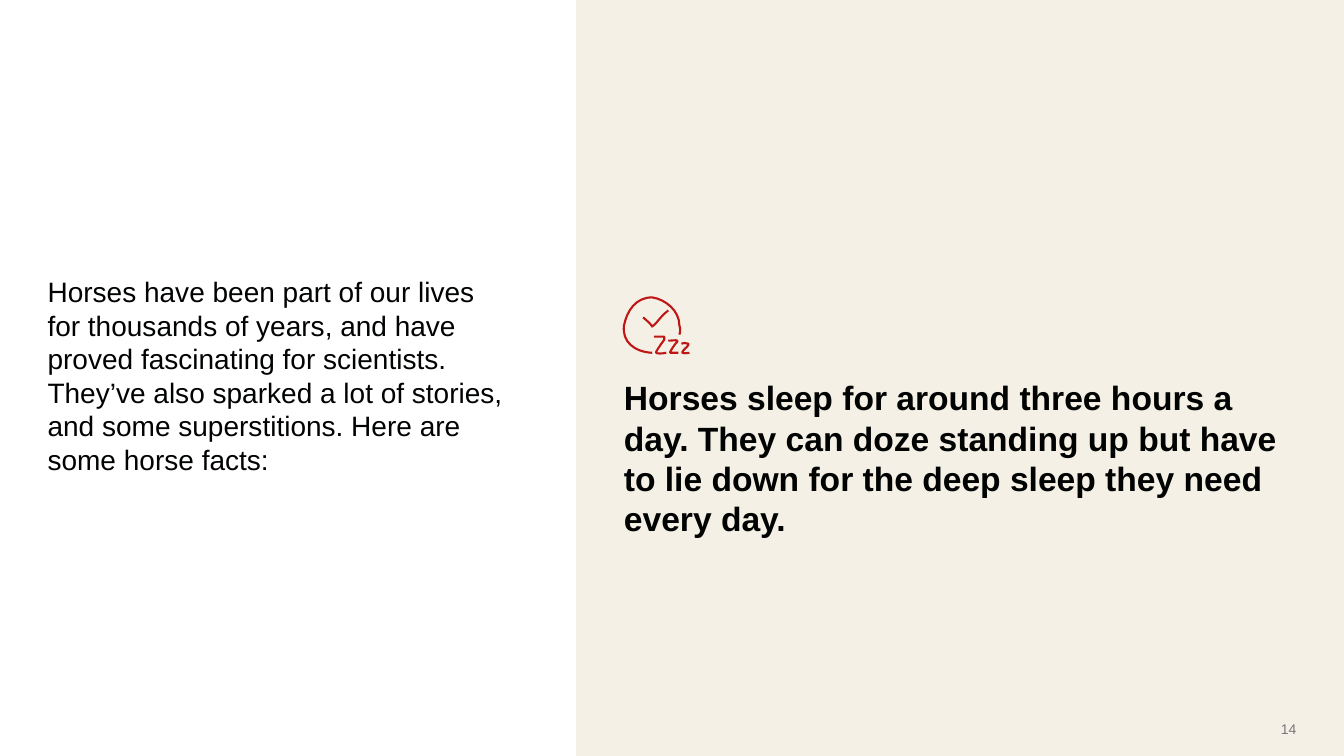
"""Build a slide with horse facts beside a sleep icon."""
import lxml.etree
import pptx
import pptx.util
import pptx.dml.color
import pptx.enum.shapes
import pptx.enum.text
import pptx.oxml.ns

Pt = pptx.util.Pt
qn = pptx.oxml.ns.qn
ALIGN = pptx.enum.text.PP_ALIGN
ANCHOR = pptx.enum.text.MSO_ANCHOR

CREAM, INK, RED, GREY = "F4F0E5", "010302", "BF1716", "797979"
WIDE, HIGH = 960, 540
SPLIT = 411.6
RIGHT = 445.68
UNIT = 0.72

ICON = {
    "face": [(28, 55), (10, 54), (-2, 44), (0, 28), (3, 13), (12, 0), (28, 0),
             (41, 2), (55, 13), (55, 28), (56, 30), (56, 35), (55, 37)],
    "hands": [(44, 13), (35, 20), (32, 27), (28, 29), (27, 27), (24, 24), (19, 20)],
    "big z": [(30, 39), (34, 39), (36, 39), (40, 39), (40, 40), (40, 41), (40, 42),
              (37, 46), (33, 52), (32, 54), (32, 54), (32, 55), (32, 55),
              (33, 56), (37, 56), (42, 55)],
    "mid z": [(44, 43), (48, 43), (52, 42), (53, 43), (53, 43), (53, 44), (53, 44),
              (50, 47), (47, 52), (46, 54), (46, 54), (46, 55), (46, 55),
              (48, 55), (53, 55), (54, 55)],
    "small z": [(57, 46), (59, 45), (61, 45), (64, 46), (64, 46), (64, 47), (64, 47),
                (62, 51), (59, 51), (58, 54), (58, 55), (58, 55), (58, 55),
                (62, 56), (62, 55), (65, 55)],
}


def color(code):
    return pptx.dml.color.RGBColor.from_string(code)


class Page:
    def __init__(self, slide, font):
        self.shapes = slide.shapes
        self.font = font

    def panel(self, x, y, w, h, fill):
        kind = pptx.enum.shapes.MSO_SHAPE.RECTANGLE
        box = self.shapes.add_shape(kind, Pt(x), Pt(y), Pt(w), Pt(h))
        box.shadow.inherit = False
        box.fill.solid()
        box.fill.fore_color.rgb = color(fill)
        box.line.fill.background()

    def text(self, words, x, y, w, h, size=20, ink=INK, bold=False,
             align=ALIGN.LEFT, anchor=ANCHOR.TOP):
        frame = self.shapes.add_textbox(Pt(x), Pt(y), Pt(w), Pt(h)).text_frame
        frame.word_wrap = True
        frame.auto_size = pptx.enum.text.MSO_AUTO_SIZE.SHAPE_TO_FIT_TEXT
        frame.vertical_anchor = anchor
        frame.margin_left = frame.margin_right = 0
        frame.margin_top = frame.margin_bottom = 0
        para = frame.paragraphs[0]
        para.alignment = align
        para.text = words
        font = para.runs[0].font if len(para.runs) == 1 else para.font
        font.name = self.font
        font.size = Pt(size)
        font.bold = bold
        font.color.rgb = color(ink)

    def icon(self, parts, x, y, ink):
        group = self.shapes.add_group_shape()
        for knots in parts:
            dots = [(Pt(x + a * UNIT), Pt(y + b * UNIT)) for a, b in knots]
            self.curve(group, dots, ink)

    def curve(self, group, dots, ink, width=1.5):
        pen = group.shapes.build_freeform(*dots[0])
        pen.add_line_segments(dots[3::3], close=False)
        path = pen.convert_to_shape()
        left = min(a for a, b in dots[::3])
        top = min(b for a, b in dots[::3])
        for i, node in enumerate(list(path.element.iter(qn("a:lnTo")))):
            node.tag = qn("a:cubicBezTo")
            for k in (0, 1):
                a, b = dots[3 * i + 1 + k]
                grip = lxml.etree.Element(qn("a:pt"), x=str(a - left), y=str(b - top))
                node.insert(k, grip)
        path.shadow.inherit = False
        path.fill.background()
        path.line.color.rgb = color(ink)
        path.line.width = Pt(width)


def main():
    deck = pptx.Presentation()
    deck.slide_width, deck.slide_height = Pt(WIDE), Pt(HIGH)
    page = Page(deck.slides.add_slide(deck.slide_layouts[6]), "Arial")

    page.panel(SPLIT, 0, WIDE - SPLIT, HIGH, CREAM)
    page.text("Horses have been part of our lives \vfor thousands of years, and have "
              "proved fascinating for scientists. They’ve also sparked a lot of "
              "stories, and some superstitions. Here are some horse facts:",
              34, 196, 343.44, 121)
    page.text("Horses sleep for around three hours a day. They can doze standing up "
              "but have to lie down for the deep sleep they need every day.",
              RIGHT, 269.5, 480.24, 87, size=24, bold=True)
    page.icon(ICON.values(), RIGHT, 212.4, RED)
    page.text("14", 864.72, 514.4, 61.2, 12.24, size=10, ink=GREY,
              align=ALIGN.RIGHT, anchor=ANCHOR.MIDDLE)

    deck.save("out.pptx")


if __name__ == "__main__":
    main()
